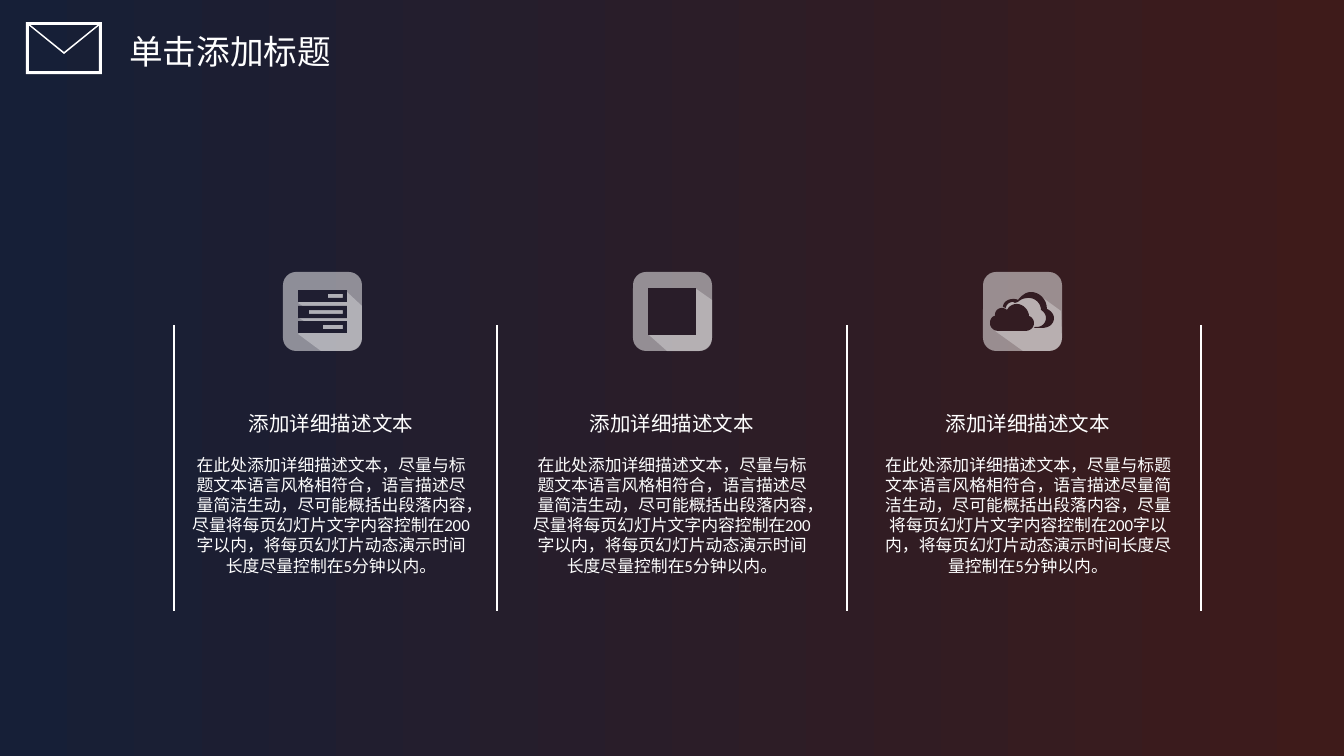
from dataclasses import dataclass

from lxml.etree import SubElement
from pptx import Presentation
from pptx.dml.color import RGBColor
from pptx.enum.shapes import MSO_CONNECTOR, MSO_SHAPE
from pptx.enum.text import MSO_AUTO_SIZE, PP_ALIGN
from pptx.oxml.ns import qn
from pptx.util import Pt

SCALE = 914400 / 134.4
SLIDE_W, SLIDE_H = 1344, 756


@dataclass(frozen=True)
class Theme:
    """Colours, fonts and type sizes of the slide."""
    navy: str = "161F37"
    maroon: str = "3E1B1A"
    white: str = "FFFFFF"
    body: str = "FEFEFE"
    latin: str = "Calibri"
    cjk: str = "Noto Sans CJK SC"
    title_pt: int = 18
    heading_pt: int = 11
    body_pt: int = 9
    line_pt: float = 0.75
    tile_alpha: int = 50
    shade_alpha: int = 30


THEME = Theme()
TITLE = "单击添加标题"
HEADING = "添加详细描述文本"
BODY = ("在此处添加详细描述文本，尽量与标题文本语言风格相符合，语言描述尽量简洁生动，"
        "尽可能概括出段落内容，尽量将每页幻灯片文字内容控制在200字以内，"
        "将每页幻灯片动态演示时间长度尽量控制在5分钟以内。")

TILE = 79
CORNER = (TILE, 74, 74, TILE, 66, TILE)


def px(v):
    """Turn px into EMU."""
    return round(v * SCALE)


def rect(x1, y1, x2, y2):
    """Return the outline of a rectangle."""
    return [(x1, y1), (x2, y1), (x2, y2), (x1, y2)]


LIST_GLYPH = [rect(15, y, 64, y + 12) for y in (18, 34, 49)] + [
    rect(x, y, 60, y + 4) for x, y in ((45, 22), (26, 38), (40, 53))]
LIST_SHADE = [(63, 19), (79, 34), (79, 66), CORNER, (38, 79), (15, 62), (24, 55), (26, 52),
              (16, 46), (24, 44), (16, 36), (23, 36), (15, 31), (28, 24)]
SQUARE_GLYPH = [rect(15, 16, 63, 63)]
SQUARE_SHADE = [(62, 16), (79, 28), (79, 66), CORNER, (34, 79), (16, 63)]
CLOUD_GLYPH = [
    [(34, 32), (40, 32, 46, 38, 46, 44), (49, 45, 51, 48, 51, 51), (51, 56, 47, 59, 42, 59),
     (16, 59), (11, 59, 7, 56, 7, 51), (7, 48, 9, 44, 12, 44), (12, 43),
     (12, 39, 15, 36, 19, 36), (21, 36, 23, 37, 24, 38), (26, 34, 30, 32, 34, 32)],
    [(48, 20), (56, 20, 64, 27, 64, 37), (67, 38, 71, 42, 71, 46), (71, 52, 66, 56, 59, 56),
     (51, 56), (52, 55), (54, 55), (59, 55, 63, 51, 63, 46), (63, 42, 60, 39, 58, 38),
     (58, 31, 52, 26, 46, 26), (42, 26, 38, 27, 35, 30), (32, 31), (30, 30),
     (26, 30, 23, 33, 23, 36), (20, 35), (20, 31, 24, 27, 30, 27),
     (31, 27, 34, 27, 35, 28), (38, 24, 43, 20, 48, 20)],
]
CLOUD_SHADE = [(23, 36), (23, 32), (30, 28), (35, 30), (40, 24), (50, 23), (56, 23), (78, 39),
               (79, 66), CORNER, (40, 79), (12, 59), (24, 54), (19, 55), (30, 42)]


def flatten(outline, steps=8):
    """Turn points and cubic segments into EMU points."""
    pts = [outline[0]]
    for seg in outline[1:]:
        if len(seg) == 2:
            pts.append(seg)
            continue
        ctrl = [pts[-1], seg[:2], seg[2:4], seg[4:]]
        for i in range(1, steps + 1):
            t = i / steps
            weights = ((1 - t) ** 3, 3 * t * (1 - t) ** 2, 3 * t * t * (1 - t), t ** 3)
            pts.append(tuple(sum(w * c[k] for w, c in zip(weights, ctrl)) for k in (0, 1)))
    return [(px(x), px(y)) for x, y in pts]


def add_outline(shapes, x, y, outlines):
    """Draw closed outlines as one freeform with its origin at x, y."""
    contours = [flatten(o) for o in outlines]
    builder = shapes.build_freeform(*contours[0][0], scale=1.0)
    builder.add_line_segments(contours[0][1:], close=True)
    for pts in contours[1:]:
        builder.move_to(*pts[0])
        builder.add_line_segments(pts[1:], close=True)
    return builder.convert_to_shape(px(x), px(y))


def paint(sp, color, alpha=100):
    """Give a shape a plain fill without line or shadow."""
    sp.shadow.inherit = False
    sp.line.fill.background()
    sp.fill.solid()
    sp.fill.fore_color.rgb = RGBColor.from_string(color)
    if alpha < 100:
        clr = sp._element.spPr.find(qn("a:solidFill"))[0]
        SubElement(clr, qn("a:alpha"), val=str(alpha * 1000))


def fill_gradient(fill, left, right):
    """Fill with the part of the slide gradient between two x positions."""
    ends = [RGBColor.from_string(c) for c in (THEME.navy, THEME.maroon)]
    fill.gradient()
    fill.gradient_angle = 0
    for stop, x in zip(fill.gradient_stops, (left, right)):
        stop.color.rgb = RGBColor(*(round(a + (b - a) * x / SLIDE_W) for a, b in zip(*ends)))


def style_paragraph(p, text, size, color, latin):
    """Set the text and font of a paragraph."""
    p.text = text
    p.font.size = Pt(size)
    p.font.color.rgb = RGBColor.from_string(color)
    p.font.name = latin
    SubElement(p._p.pPr.find(qn("a:defRPr")), qn("a:ea"), typeface=THEME.cjk)


def add_text_frame(shapes, x, y, w, h):
    """Add a wrapping text box and return its text frame."""
    tf = shapes.add_textbox(px(x), px(y), px(w), px(h)).text_frame
    tf.word_wrap = True
    tf.auto_size = MSO_AUTO_SIZE.SHAPE_TO_FIT_TEXT
    return tf


def add_header(slide, x, y, w, h):
    """Place the envelope and the slide title."""
    shapes = slide.shapes.add_group_shape().shapes
    flap = [(1, 2), (2, 1), (w // 2, 30), (w // 2, 32)]
    frame = [rect(0, 0, w, h), rect(3, 3, w - 3, h - 3)]
    for outlines in (frame, [flap], [[(w - fx, fy) for fx, fy in flap]]):
        paint(add_outline(shapes, x, y, outlines), THEME.white)
    tf = add_text_frame(shapes, x + 90, y + 2, 290, 54)
    style_paragraph(tf.paragraphs[0], TITLE, THEME.title_pt, THEME.white, THEME.cjk)


def add_icon(slide, x, y, glyph, shade):
    """Place a rounded tile with a long shade and a glyph."""
    shapes = slide.shapes.add_group_shape().shapes
    tile = shapes.add_shape(MSO_SHAPE.ROUNDED_RECTANGLE, px(x), px(y), px(TILE), px(TILE))
    paint(tile, THEME.white, THEME.tile_alpha)
    paint(add_outline(shapes, x, y, [shade]), THEME.white, THEME.shade_alpha)
    sp = add_outline(shapes, x, y, glyph)
    paint(sp, THEME.navy)
    fill_gradient(sp.fill, sp.left / SCALE, (sp.left + sp.width) / SCALE)


def add_description(slide, x, y, w, h):
    """Place a centred heading with its body text."""
    tf = add_text_frame(slide.shapes, x, y, w, h)
    tf.margin_left = tf.margin_right = px(9)
    tf.margin_top = tf.margin_bottom = px(5)
    head, body = tf.paragraphs[0], tf.add_paragraph()
    style_paragraph(head, HEADING, THEME.heading_pt, THEME.white, THEME.latin)
    style_paragraph(body, BODY, THEME.body_pt, THEME.body, THEME.latin)
    body.space_before = Pt(10)
    head.alignment = body.alignment = PP_ALIGN.CENTER


def add_divider(slide, x, y, h):
    """Place a thin vertical line."""
    line = slide.shapes.add_connector(MSO_CONNECTOR.STRAIGHT, px(x), px(y), px(x), px(y + h))
    line.line.color.rgb = RGBColor.from_string(THEME.white)
    line.line.width = Pt(THEME.line_pt)
    SubElement(line._element.spPr, qn("a:effectLst"))


def main():
    """Build and save the slide."""
    prs = Presentation()
    prs.slide_width, prs.slide_height = px(SLIDE_W), px(SLIDE_H)
    slide = prs.slides.add_slide(prs.slide_layouts[6])
    fill_gradient(slide.background.fill, 0, SLIDE_W)
    add_header(slide, 26, 22, 76, 52)
    for x in (174, 497, 847, 1201):
        add_divider(slide, x, 325, 286)
    icons = ((LIST_GLYPH, LIST_SHADE), (SQUARE_GLYPH, SQUARE_SHADE), (CLOUD_GLYPH, CLOUD_SHADE))
    for i, (glyph, shade) in enumerate(icons):
        add_icon(slide, 283 + 350 * i, 272, glyph, shade)
    for x, w in ((180, 302), (524, 296), (876, 304)):
        add_description(slide, x, 406, w, 175)
    prs.save("out.pptx")


if __name__ == "__main__":
    main()
